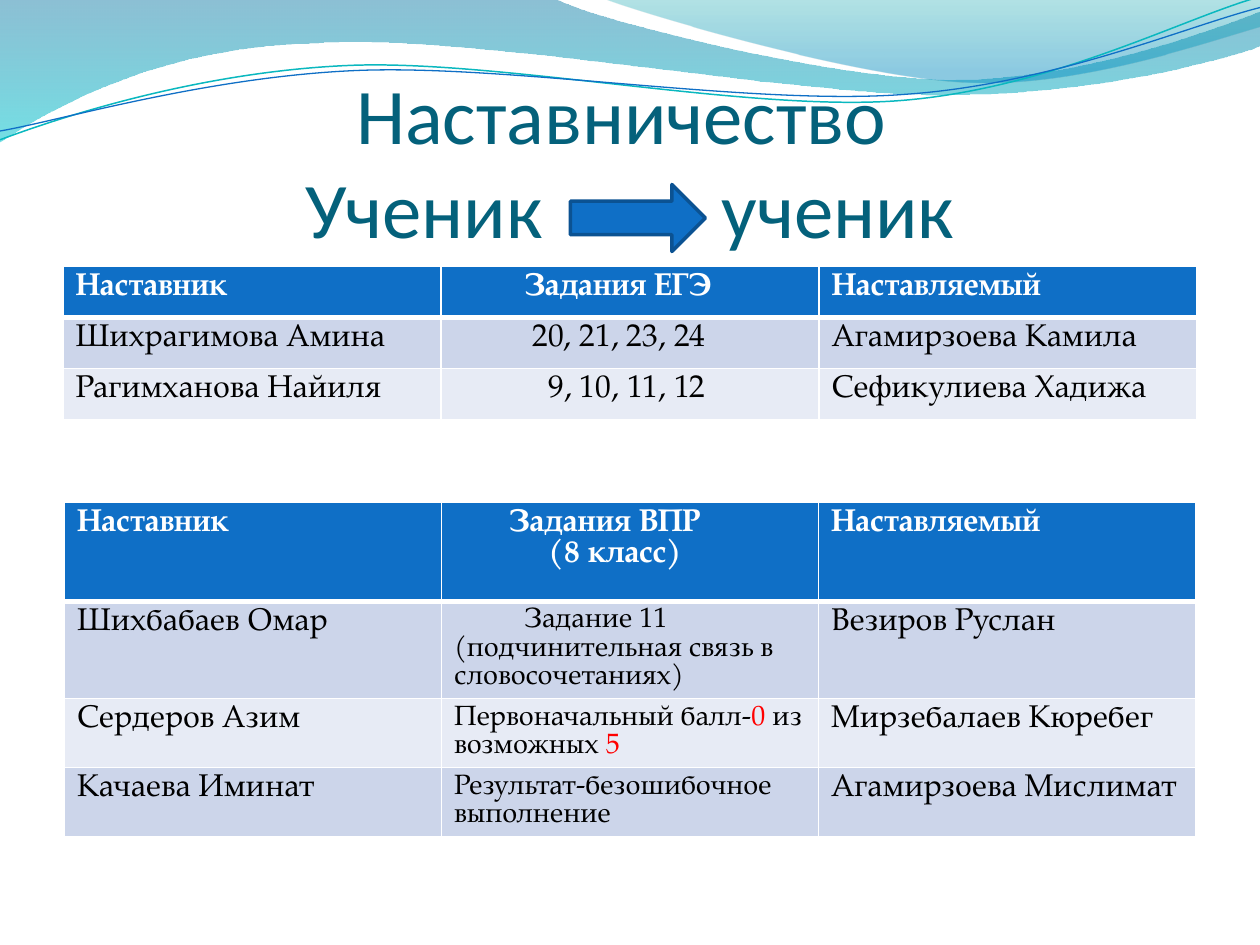
from lxml import etree
from pptx import Presentation
from pptx.dml.color import RGBColor
from pptx.enum.shapes import MSO_SHAPE
from pptx.enum.text import MSO_ANCHOR, MSO_AUTO_SIZE, PP_ALIGN
from pptx.oxml.ns import qn
from pptx.util import Cm, Pt

BLUE = RGBColor(0x0F, 0x6F, 0xC6)
DARK_BLUE = RGBColor(0x0B, 0x52, 0x92)
TITLE_TEAL = RGBColor(0x04, 0x61, 0x7B)
LINE_TEAL = RGBColor(0x0A, 0xB8, 0xBF)
WAVE_BLUE = RGBColor(0x00, 0x74, 0xA1)
WAVE_CYAN = RGBColor(0x00, 0xC6, 0xCF)
CREST_TEAL = RGBColor(0x00, 0xA1, 0xA9)
CREST_BLUE = RGBColor(0x00, 0x8B, 0xBF)
WHITE = RGBColor(0xFF, 0xFF, 0xFF)
BLACK = RGBColor(0x00, 0x00, 0x00)
RED = RGBColor(0xFF, 0x00, 0x00)
BANDS = [RGBColor(0xCC, 0xD5, 0xEA), RGBColor(0xE7, 0xEB, 0xF5)]
TITLE_FONT = "Calibri"
TABLE_FONT = "TeX Gyre Pagella"
UNIT = Cm(2.54) / 1000  # wave points are in inches, stored as thousandths

# Each wave: start, pieces (one point is a line, three are a Bezier curve),
# gradient stops as (position, colour, opacity), line as (colour, width)
WAVES = [
    ((0, 0),
     [[(4.4, -0.01)],
      [(4.76, 0.17), (6.64, 0.63), (7.58, 0.63)],
      [(8.53, 0.63), (9.58, 0.26), (10, 0.09)],
      [(10.01, 0.36)],
      [(9.83, 0.44), (8.7, 0.76), (7.46, 0.75)],
      [(6.22, 0.75), (3.82, 0.28), (2.57, 0.34)],
      [(1.29, 0.36), (0.46, 0.83), (-0.01, 1.13)]],
     [(0, WAVE_BLUE, 45), (1, WAVE_CYAN, 55)], None),
    ((4.79, -0.01),
     [[(5.09, 0.11), (6.82, 0.62), (7.69, 0.65)],
      [(8.56, 0.69), (9.61, 0.32), (10, 0.21)],
      [(10, 0)]],
     [(0, CREST_TEAL, 30), (0.8, CREST_BLUE, 45)], None),
    ((0, 1.11),
     [[(0.48, 0.93), (1.58, 0.57), (2.77, 0.52)],
      [(3.95, 0.47), (5.93, 0.89), (7.13, 0.8)],
      [(8.33, 0.71), (9.38, 0.15), (9.98, -0.02)]],
     None, (LINE_TEAL, 0.85)),
    ((0, 1.04),
     [[(0.47, 0.96), (1.64, 0.61), (2.83, 0.56)],
      [(4.03, 0.51), (5.97, 0.84), (7.17, 0.75)],
      [(8.36, 0.67), (9.41, 0.21), (10, 0.06)]],
     None, (BLUE, 0.75)),
]

# Each table: left, top, column width, row heights, size of the middle column, rows.
# The middle cell lists paragraphs as (first-line indent, runs).
TABLES = [
    (1.27, 5.37, 7.62, [1.03, 1.03, 1.03], 18, [
        ("Наставник", [(1.43, [("Задания ЕГЭ", WHITE)])], "Наставляемый"),
        ("Шихрагимова Амина", [(1.59, [("20, 21, 23, 24", BLACK)])], "Агамирзоева Камила"),
        ("Рагимханова Найиля", [(1.91, [("9, 10, 11, 12", BLACK)])], "Сефикулиева Хадижа"),
    ]),
    (1.3, 10.13, 7.6, [1.99, 1.8, 1.03, 1.03], 16, [
        ("Наставник",
         [(1.11, [("Задания ВПР", WHITE)]), (1.91, [("(8 класс)", WHITE)])],
         "Наставляемый"),
        ("Шихбабаев Омар",
         [(1.41, [("Задание 11 (подчинительная связь в словосочетаниях)", BLACK)])],
         "Везиров Руслан"),
        ("Сердеров Азим",
         [(0, [("Первоначальный балл-", BLACK), ("0", RED),
               (" из возможных ", BLACK), ("5", RED)])],
         "Мирзебалаев Кюребег"),
        ("Качаева Иминат",
         [(0, [("Результат-безошибочное выполнение", BLACK)])],
         "Агамирзоева Мислимат"),
    ]),
]


def bend(shape, pieces):
    """Turn each three-point piece of the outline into one Bezier curve."""
    segments = iter(list(shape._element.iter(qn("a:lnTo"))))
    for piece in pieces:
        parts = [next(segments) for _ in piece]
        if len(parts) == 3:
            curve = etree.Element(qn("a:cubicBezTo"))
            parts[0].addprevious(curve)
            for part in parts:
                curve.append(part[0])
                part.getparent().remove(part)


def add_border(cell, side, width):
    properties = cell._tc.get_or_add_tcPr()
    border = etree.SubElement(properties, qn(f"a:ln{side}"), w=str(Pt(width)))
    fill = etree.SubElement(border, qn("a:solidFill"))
    etree.SubElement(fill, qn("a:srgbClr"), val=str(WHITE))


presentation = Presentation()
presentation.slide_width = Cm(25.4)
presentation.slide_height = Cm(19.05)
slide = presentation.slides.add_slide(presentation.slide_layouts[5])
title = slide.shapes.title

# Waves behind the title
for start, pieces, stops, line in WAVES:
    builder = slide.shapes.build_freeform(start[0] * 1000, start[1] * 1000, scale=UNIT)
    points = [(x * 1000, y * 1000) for piece in pieces for x, y in piece]
    builder.add_line_segments(points, close=stops is not None)
    wave = builder.convert_to_shape()
    bend(wave, pieces)
    wave.shadow.inherit = False
    if stops:
        wave.line.fill.background()
        wave.fill.gradient()
        wave.fill.gradient_angle = 270
        for stop, (position, color, opacity) in zip(wave.fill.gradient_stops, stops):
            stop.position = position
            stop.color.rgb = color
            color_element = stop._gs.find(qn("a:srgbClr"))
            etree.SubElement(color_element, qn("a:alpha"), val=str(opacity * 1000))
    else:
        wave.fill.background()
        wave.line.color.rgb = line[0]
        wave.line.width = Pt(line[1])
    title._element.addprevious(wave._element)

# Title, with a widely spaced gap for the arrow between the two words
title.left, title.top, title.width, title.height = Cm(1.27), Cm(1.96), Cm(22.86), Cm(3.17)
frame = title.text_frame
frame.auto_size = MSO_AUTO_SIZE.NONE
frame.vertical_anchor = MSO_ANCHOR.BOTTOM
frame.margin_left = frame.margin_right = frame.margin_bottom = 0
frame.margin_top = Cm(0.13)
paragraph = frame.paragraphs[0]
paragraph.alignment = PP_ALIGN.CENTER
paragraph.font.size = Pt(45)
for text in ["Наставничество ", None, "Ученик", " ", "ученик"]:
    if text is None:
        paragraph.add_line_break()
        continue
    run = paragraph.add_run()
    run.text = text
    run.font.name = TITLE_FONT
    run.font.size = Pt(45)
    run.font.color.rgb = TITLE_TEAL
    if text == " ":
        run.font._element.set("spc", "9200")

# Tables
for left, top, column_width, heights, middle_size, rows in TABLES:
    table = slide.shapes.add_table(
        len(rows), 3, Cm(left), Cm(top), Cm(3 * column_width), Cm(sum(heights))).table
    table.horz_banding = False
    for column in table.columns:
        column.width = Cm(column_width)
    for row_index, (mentor, middle, mentee) in enumerate(rows):
        table.rows[row_index].height = Cm(heights[row_index])
        is_header = row_index == 0
        color = WHITE if is_header else BLACK
        contents = [[(0, [(mentor, color)])], middle, [(0, [(mentee, color)])]]
        for column_index, paragraphs in enumerate(contents):
            cell = table.cell(row_index, column_index)
            for side in "LRTB":
                thick = (row_index, side) in [(0, "B"), (1, "T")]
                add_border(cell, side, 3 if thick else 1)
            cell.fill.solid()
            cell.fill.fore_color.rgb = BLUE if is_header else BANDS[(row_index - 1) % 2]
            size = middle_size if column_index == 1 and not is_header else 18
            for index, (indent, runs) in enumerate(paragraphs):
                frame = cell.text_frame
                paragraph = frame.add_paragraph() if index else frame.paragraphs[0]
                if indent:
                    paragraph._p.get_or_add_pPr().set("indent", str(Cm(indent)))
                for text, run_color in runs:
                    run = paragraph.add_run()
                    run.text = text
                    run.font.name = TABLE_FONT
                    run.font.size = Pt(size)
                    run.font.bold = is_header
                    run.font.color.rgb = run_color

# Arrow from pupil to pupil
arrow = slide.shapes.add_shape(
    MSO_SHAPE.RIGHT_ARROW, Cm(11.5), Cm(3.72), Cm(2.72), Cm(1.35))
arrow.shadow.inherit = False
arrow.fill.solid()
arrow.fill.fore_color.rgb = BLUE
arrow.line.color.rgb = DARK_BLUE
arrow.line.width = Pt(2)

presentation.save("out.pptx")
